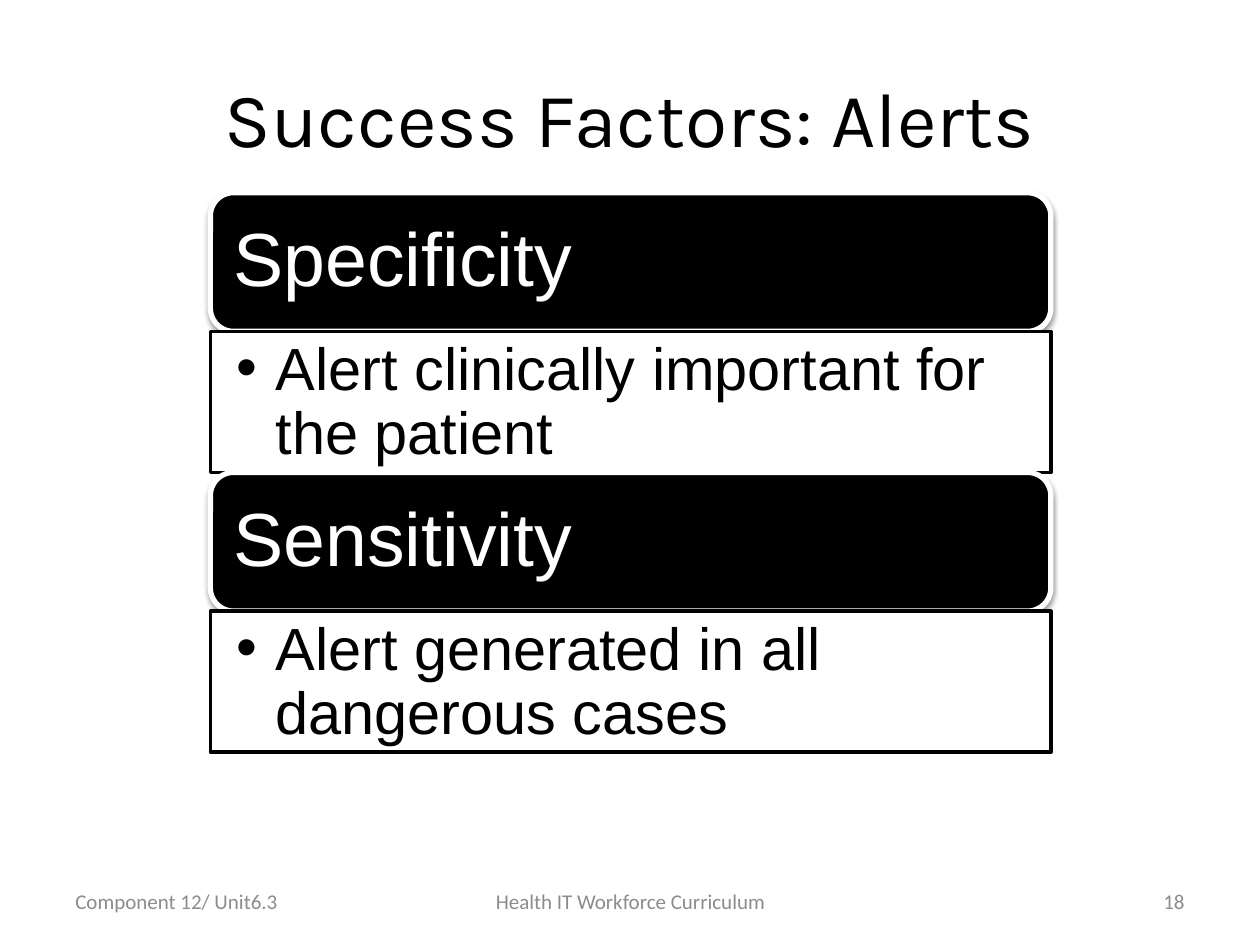
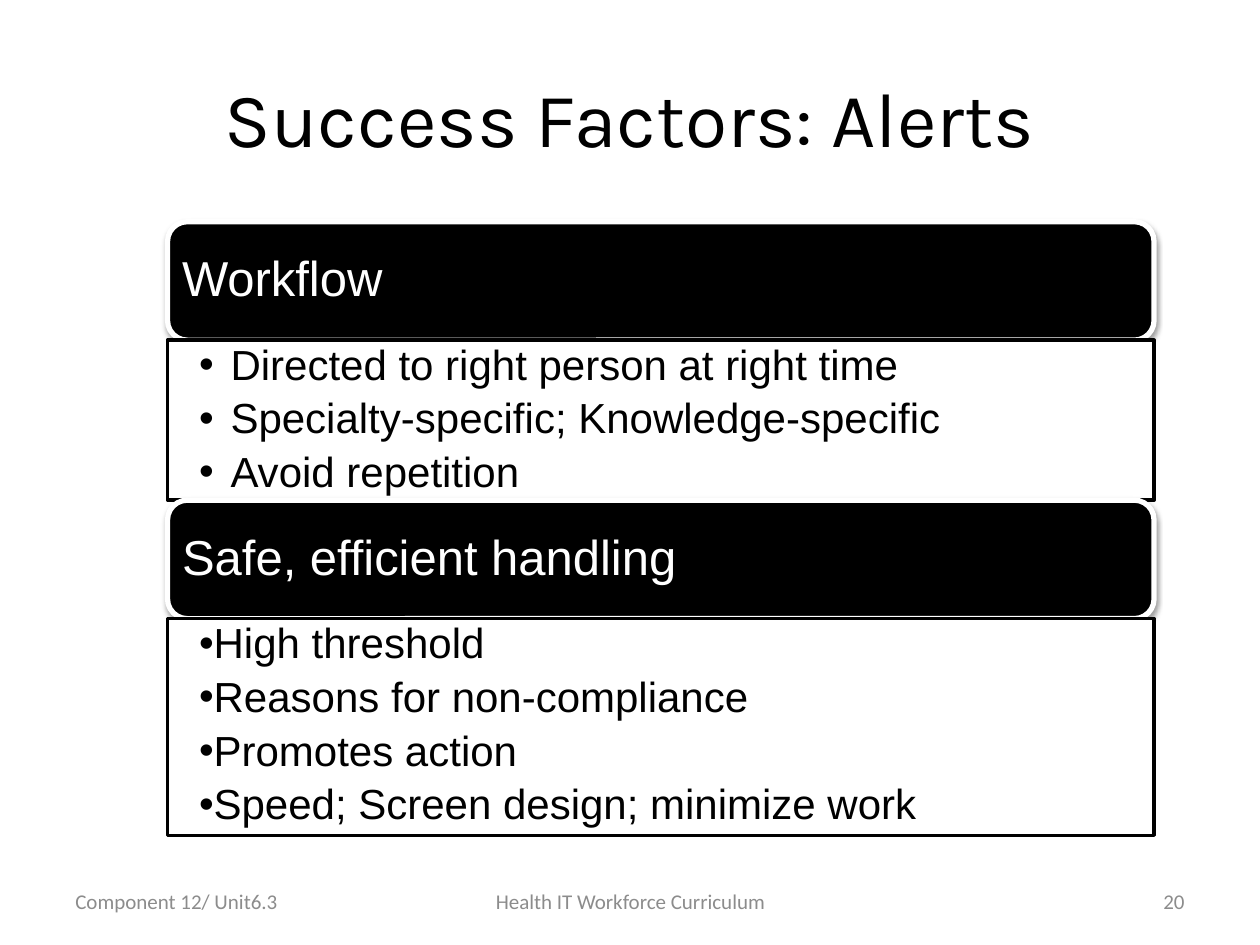
"""Build two slides on the success factors of clinical alerts."""
from lxml.etree import SubElement
from pptx import Presentation
from pptx.dml.color import RGBColor
from pptx.enum.shapes import MSO_SHAPE as Shape
from pptx.enum.text import MSO_ANCHOR as Anchor, PP_ALIGN as Align
from pptx.oxml.ns import qn
from pptx.util import Inches, Pt

COLORS = {"ink": "000000", "paper": "FFFFFF", "footer": "8C8C8C"}
TITLE = "Success Factors: Alerts"
FOOTER = [
    ("Component 12/ Unit6.3", 0.5, 2.33, Align.LEFT),
    ("Health IT Workforce Curriculum", 3.42, 3.17, Align.CENTER),
]
PAGE_NUMBER = (7.17, 2.33, Align.RIGHT)
SLIDES = [
    {
        "number": "18", "left": 1.67, "top": 1.53, "width": 6.67,
        "heading": {"height": 1.1, "size": 43, "margins": (0.13, 0.13, 0.13, 0.13)},
        "points": {"size": 34, "margins": (0.21, 0.06, 0.33, 0.06)},
        "factors": [
            {"name": "Specificity", "height": 1.12, "indent": 0.31,
             "points": ["Alert clinically important for the patient"]},
            {"name": "Sensitivity", "height": 1.12, "indent": 0.31,
             "points": ["Alert generated in all dangerous cases"]},
        ],
    },
    {
        "number": "20", "left": 1.33, "top": 1.76, "width": 7.83,
        "heading": {"height": 0.94, "size": 28, "margins": (0.07, 0.07, 0.07, 0.07)},
        "points": {"size": 24, "margins": (0.25, 0.03, 0.19, 0.03)},
        "factors": [
            {"name": "Workflow", "height": 1.27, "indent": 0.25,
             "points": ["Directed to right person at right time",
                        "Specialty-specific; Knowledge-specific",
                        "Avoid repetition"]},
            {"name": "Safe, efficient handling", "height": 1.72, "indent": 0,
             "points": ["High threshold", "Reasons for non-compliance", "Promotes action",
                        "Speed; Screen design; minimize work"]},
        ],
    },
]


def color(name):
    return RGBColor.from_string(COLORS[name])


def write(frame, lines, *, size, font="Arial", ink="ink", align=Align.LEFT,
          anchor=Anchor.MIDDLE, margins=(0.1, 0.05, 0.1, 0.05), spacing=1.0,
          after=0, indent=None):
    frame.word_wrap = True
    frame.vertical_anchor = anchor
    (frame.margin_left, frame.margin_top,
     frame.margin_right, frame.margin_bottom) = map(Inches, margins)
    frame.text = "\n".join(lines)
    for paragraph in frame.paragraphs:
        paragraph.alignment = align
        paragraph.line_spacing = spacing
        paragraph.space_after = Pt(after)
        if indent is not None:
            add_bullet(paragraph, indent)
        for run in paragraph.runs:
            run.font.size = Pt(size)
            run.font.name = font
            run.font.color.rgb = color(ink)


def add_bullet(paragraph, indent):
    paragraph.level = 1
    properties = paragraph._p.get_or_add_pPr()
    properties.set("marL", str(Inches(indent)))
    properties.set("indent", str(-Inches(indent)))
    SubElement(properties, qn("a:buFont"), typeface="Arial")
    SubElement(properties, qn("a:buChar"), char="•")


def add_box(slide, kind, place, fill, line, line_width):
    box = slide.shapes.add_shape(kind, *map(Inches, place))
    box.shadow.inherit = False
    box.fill.solid()
    box.fill.fore_color.rgb = color(fill)
    box.line.color.rgb = color(line)
    box.line.width = Pt(line_width)
    return box


def add_shadow(box):
    effects = box._element.spPr.find(qn("a:effectLst"))
    shadow = SubElement(effects, qn("a:outerShdw"), blurRad=str(Pt(3.1)),
                        dist=str(Pt(1.6)), dir="5400000", rotWithShape="0")
    tint = SubElement(shadow, qn("a:srgbClr"), val=COLORS["ink"])
    SubElement(tint, qn("a:alpha"), val="38000")


def add_factors(slide, content):
    left, top, width = content["left"], content["top"], content["width"]
    heading, points = content["heading"], content["points"]
    for factor in content["factors"]:
        header = add_box(slide, Shape.ROUNDED_RECTANGLE,
                         (left, top, width, heading["height"]), "ink", "paper", 3)
        add_shadow(header)
        write(header.text_frame, [factor["name"]], size=heading["size"], ink="paper",
              margins=heading["margins"], spacing=0.9)
        top += heading["height"]
        body = add_box(slide, Shape.RECTANGLE,
                       (left, top, width, factor["height"]), "paper", "ink", 2)
        write(body.text_frame, factor["points"], size=points["size"], anchor=Anchor.TOP,
              margins=points["margins"], spacing=0.9, after=round(points["size"] * 0.2, 1),
              indent=factor["indent"])
        top += factor["height"]


def add_footer(slide, number):
    for text, left, width, align in [*FOOTER, (number, *PAGE_NUMBER)]:
        note = slide.shapes.add_textbox(*map(Inches, (left, 6.95, width, 0.4)))
        write(note.text_frame, [text], size=12, font="Calibri", ink="footer", align=align)


def main():
    deck = Presentation()
    deck.slide_width, deck.slide_height = Inches(10), Inches(7.5)
    for content in SLIDES:
        slide = deck.slides.add_slide(deck.slide_layouts[5])
        title = slide.shapes.title
        title.left, title.top, title.width, title.height = map(Inches, (0.5, 0.3, 9, 1.25))
        write(title.text_frame, [TITLE], size=44, font="Karla", align=Align.CENTER)
        add_factors(slide, content)
        add_footer(slide, content["number"])
    deck.save("out.pptx")


if __name__ == "__main__":
    main()
